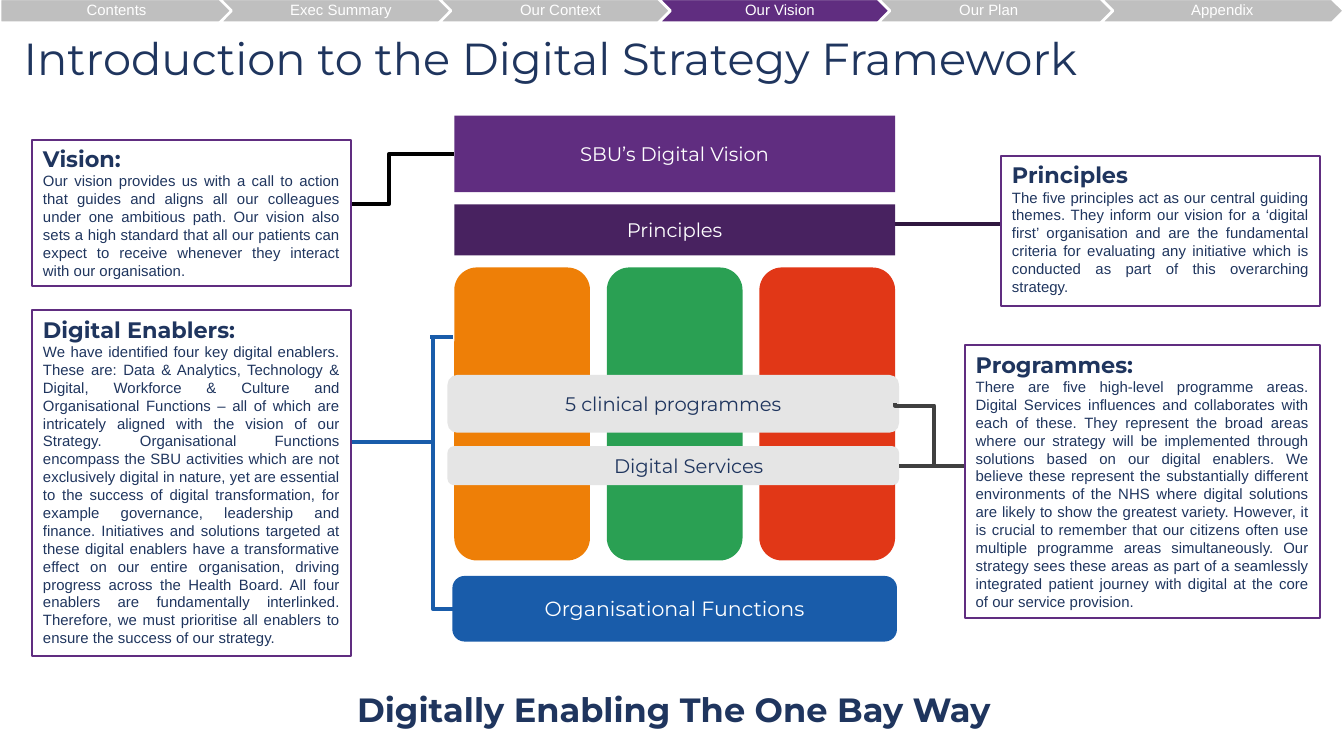
import pptx
import pptx.dml.color
import pptx.enum.shapes
import pptx.enum.text
import pptx.oxml.ns
import pptx.util
from lxml import etree

RGB = pptx.dml.color.RGBColor
SHAPE = pptx.enum.shapes.MSO_SHAPE
CONNECTOR = pptx.enum.shapes.MSO_CONNECTOR
ALIGN = pptx.enum.text.PP_ALIGN
ANCHOR = pptx.enum.text.MSO_ANCHOR

NAVY = RGB(0x1F, 0x35, 0x5E)
WHITE = RGB(0xFF, 0xFF, 0xFF)
BLACK = RGB(0, 0, 0)
PURPLE = RGB(0x60, 0x2D, 0x80)
DARK_PURPLE = RGB(0x48, 0x22, 0x60)
DEEP_PURPLE = RGB(0x30, 0x17, 0x40)
BLUE = RGB(0x19, 0x5C, 0xAA)
ORANGE = RGB(0xEE, 0x7F, 0x07)
GREEN = RGB(0x2A, 0xA0, 0x53)
RED = RGB(0xE1, 0x37, 0x17)
SILVER = RGB(0xE5, 0xE5, 0xE5)
GREY = RGB(0xBF, 0xBF, 0xBF)
CHARCOAL = RGB(0x40, 0x40, 0x40)
HEADING_FONT, BODY_FONT = "Montserrat", "Arial"

SECTIONS = ["Contents", "Exec Summary", "Our Context", "Our Vision", "Our Plan", "Appendix"]
ENABLERS = (
    "We have identified four key digital enablers. These are: Data & Analytics, Technology & "
    "Digital, Workforce & Culture and Organisational Functions – all of which are intricately "
    "aligned with the vision of our Strategy. Organisational Functions encompass the SBU "
    "activities which are not exclusively digital in nature, yet are essential to the success "
    "of digital transformation, for example governance, leadership and finance. Initiatives and "
    "solutions targeted at these digital enablers have a transformative effect on our entire "
    "organisation, driving progress across the Health Board. All four enablers are fundamentally "
    "interlinked. Therefore, we must prioritise all enablers to ensure the success of our strategy.")
VISION = (
    "Our vision provides us with a call to action that guides and aligns all our colleagues "
    "under one ambitious path. Our vision also sets a high standard that all our patients can "
    "expect to receive whenever they interact with our organisation.")
PRINCIPLES = (
    "The five principles act as our central guiding themes. They inform our vision for a "
    "‘digital first’ organisation and are the fundamental criteria for evaluating any initiative "
    "which is conducted as part of this overarching strategy.")
PROGRAMMES = (
    "There are five high-level programme areas. Digital Services influences and collaborates "
    "with each of these. They represent the broad areas where our strategy will be implemented "
    "through solutions based on our digital enablers. We believe these represent the "
    "substantially different environments of the NHS where digital solutions are likely to show "
    "the greatest variety. However, it is crucial to remember that our citizens often use "
    "multiple programme areas simultaneously. Our strategy sees these areas as part of a "
    "seamlessly integrated patient journey with digital at the core of our service provision.")


def cells(count):
    """Length of a number of grid cells; the slide is 100 cells wide."""
    return pptx.util.Inches(count / 10)


def format_text(para, size, color, font=HEADING_FONT, bold=False, align=ALIGN.CENTER):
    para.alignment = align
    for span in para.runs:
        span.font.size = pptx.util.Pt(size)
        span.font.name = font
        span.font.bold = bold
        span.font.color.rgb = color


def set_insets(frame, left, top, right, bottom):
    frame.margin_left, frame.margin_top = cells(left), cells(top)
    frame.margin_right, frame.margin_bottom = cells(right), cells(bottom)


def add_block(page, kind, box, fill, line=None, weight=1.0):
    block = page.shapes.add_shape(kind, *map(cells, box))
    block.shadow.inherit = False
    block.fill.solid()
    block.fill.fore_color.rgb = fill
    if line is None:
        block.line.fill.background()
    else:
        block.line.color.rgb = line
        block.line.width = pptx.util.Pt(weight)
    block.text_frame.word_wrap = True
    return block


def label_block(block, text, color=WHITE, size=10.5, font=HEADING_FONT, insets=(0, 0, 0, 0)):
    frame = block.text_frame
    set_insets(frame, *insets)
    frame.vertical_anchor = ANCHOR.MIDDLE
    frame.text = text
    format_text(frame.paragraphs[0], size, color, font)


def add_line(page, begin, end, color, kind=CONNECTOR.STRAIGHT, weight=2.25):
    line = page.shapes.add_connector(kind, *map(cells, (*begin, *end)))
    line.line.color.rgb = color
    line.line.width = pptx.util.Pt(weight)
    etree.SubElement(line._element.spPr, pptx.oxml.ns.qn("a:effectLst"))
    return line


def set_bend(line, share):
    """Place the bend of an elbow at a share of its run."""
    guides = line._element.spPr.prstGeom.get_or_add_avLst()
    etree.SubElement(guides, pptx.oxml.ns.qn("a:gd"), name="adj1", fmla=f"val {round(share * 100000)}")


def add_turned_elbow(page, begin, end, color):
    """Elbow that leaves vertically: a flipped frame turned by 270 degrees."""
    middle_x, middle_y = (begin[0] + end[0]) / 2, (begin[1] + end[1]) / 2
    half_run, half_rise = (end[1] - begin[1]) / 2, (end[0] - begin[0]) / 2
    elbow = add_line(page, (middle_x + half_run, middle_y - half_rise),
                     (middle_x - half_run, middle_y + half_rise), color, CONNECTOR.ELBOW)
    elbow._element.spPr.xfrm.set("rot", "16200000")
    return elbow


def add_navigation(page, box, current):
    left, top, width, height = box
    step = width * 0.1633
    for index, name in enumerate(SECTIONS):
        first, last = index == 0, index == len(SECTIONS) - 1
        kind = SHAPE.PENTAGON if first else SHAPE.CHEVRON
        span = 17.8 if first else 19.7 if index < 4 else 18.1
        start = left + (width - span if last else index * step)
        block = add_block(page, kind, (start, top, span, height),
                          PURPLE if name == current else GREY, WHITE, 1.5)
        label_block(block, name, size=8, font=BODY_FONT,
                    insets=(2 if first or last else 0.4, 0.2, 2, 0.2))
        block.text_frame.paragraphs[0].line_spacing = 0.9


def add_title(page, box, text):
    title = page.shapes.title
    title.left, title.top, title.width, title.height = map(cells, box)
    frame = title.text_frame
    frame.text = text
    frame.word_wrap = True
    frame.auto_size = pptx.enum.text.MSO_AUTO_SIZE.NONE
    frame.vertical_anchor = ANCHOR.MIDDLE
    set_insets(frame, 0.75, 0.4, 0.75, 0.4)
    format_text(frame.paragraphs[0], 24, NAVY, align=ALIGN.LEFT)


def add_framework(page, box):
    left, top, width, height = box
    right = left + width

    # Lines that run behind the blocks
    add_line(page, (left - 1.8, top + 16.5), (left - 0.1, top + 16.5), BLUE)
    add_line(page, (left - 7.6, top + 24.3), (left - 1.6, top + 24.3), BLUE)
    add_line(page, (right - 1, top + 8.1), (right + 8.5, top + 8.1), DEEP_PURPLE)
    vision_link = add_line(page, (left - 9.7, top + 6.6), (left, top + 2.85), BLACK,
                           CONNECTOR.ELBOW, 2)

    # Vision and principles
    vision = add_block(page, SHAPE.RECTANGLE, (left, top, width, 5.7), PURPLE)
    label_block(vision, "SBU’s Digital Vision")
    vision_link.end_connect(vision, 1)
    principles = add_block(page, SHAPE.RECTANGLE, (left, top + 6.6, width, 3.8), DARK_PURPLE)
    label_block(principles, "Principles")

    # Three pillars
    pillar = 10.1
    step = (width - pillar) / 2
    for index, color in enumerate((ORANGE, GREEN, RED)):
        add_block(page, SHAPE.ROUNDED_RECTANGLE,
                  (left + index * step, top + 11.3, pillar, 21.8), color)

    # Bars across the pillars
    programmes, services = [
        add_block(page, SHAPE.ROUNDED_RECTANGLE, (left - 0.5, top + offset, width + 0.8, depth), SILVER)
        for offset, depth in ((19.3, 4.3), (24.6, 2.9))]
    label_block(programmes, "5 clinical programmes", NAVY)
    services_label = add_block(page, SHAPE.ROUNDED_RECTANGLE,
                               (left + 8.4, top + 24.7, 18.1, 2.7), SILVER)
    label_block(services_label, "Digital Services", NAVY)
    services_link = add_line(page, (right + 0.3, top + 26.05), (right + 5.9, top + 26.05), CHARCOAL)
    services_link.begin_connect(services, 3)

    # Organisational functions
    functions = add_block(page, SHAPE.ROUNDED_RECTANGLE,
                          (left, top + height - 4.6, width, 4.6), BLUE, BLUE, 2)
    label_block(functions, "Organisational Functions", size=11, insets=(0.3,) * 4)

    # Elbows in front of the blocks
    enabler_link = add_turned_elbow(page, (left - 1.6, top + 16.5), (left, top + 36.7), BLUE)
    enabler_link._element.spPr.prstGeom.set("prst", "bentConnector2")
    programme_link = add_turned_elbow(page, (right, top + 21.4), (right + 2.9, top + 26.1), CHARCOAL)
    set_bend(programme_link, 0.04)


def add_panel(page, box, heading, body):
    frame = add_block(page, SHAPE.RECTANGLE, box, WHITE, PURPLE).text_frame
    set_insets(frame, 0.8, 0.4, 0.8, 0.4)
    frame.vertical_anchor = ANCHOR.TOP
    frame.text = heading
    format_text(frame.paragraphs[0], 12, NAVY, bold=True, align=ALIGN.LEFT)
    para = frame.add_paragraph()
    para.text = body
    format_text(para, 8, NAVY, BODY_FONT, align=ALIGN.JUSTIFY)


def add_slogan(page, box, text):
    frame = page.shapes.add_textbox(*map(cells, box)).text_frame
    frame.word_wrap = True
    frame.text = text
    format_text(frame.paragraphs[0], 18, NAVY, bold=True)


def main():
    deck = pptx.Presentation()
    deck.slide_width, deck.slide_height = cells(100), cells(56.25)
    page = deck.slides.add_slide(deck.slide_layouts[5])
    add_title(page, (1, -0.9, 97.8, 10.4), "Introduction to the Digital Strategy Framework")
    add_navigation(page, (0, -0.1, 100, 1.8), "Our Vision")
    add_framework(page, (33.8, 8.6, 32.8, 39))
    add_panel(page, (2.4, 10.4, 23.7, 10.9), "Vision:", VISION)
    add_panel(page, (2.4, 23.1, 23.7, 25.7), "Digital Enablers:", ENABLERS)
    add_panel(page, (74.5, 11.6, 23.7, 11.2), "Principles", PRINCIPLES)
    add_panel(page, (71.8, 25.7, 26.4, 20.3), "Programmes:", PROGRAMMES)
    add_slogan(page, (22.6, 50.8, 55.1, 3.6), "Digitally Enabling The One Bay Way")
    deck.save("out.pptx")


if __name__ == "__main__":
    main()
